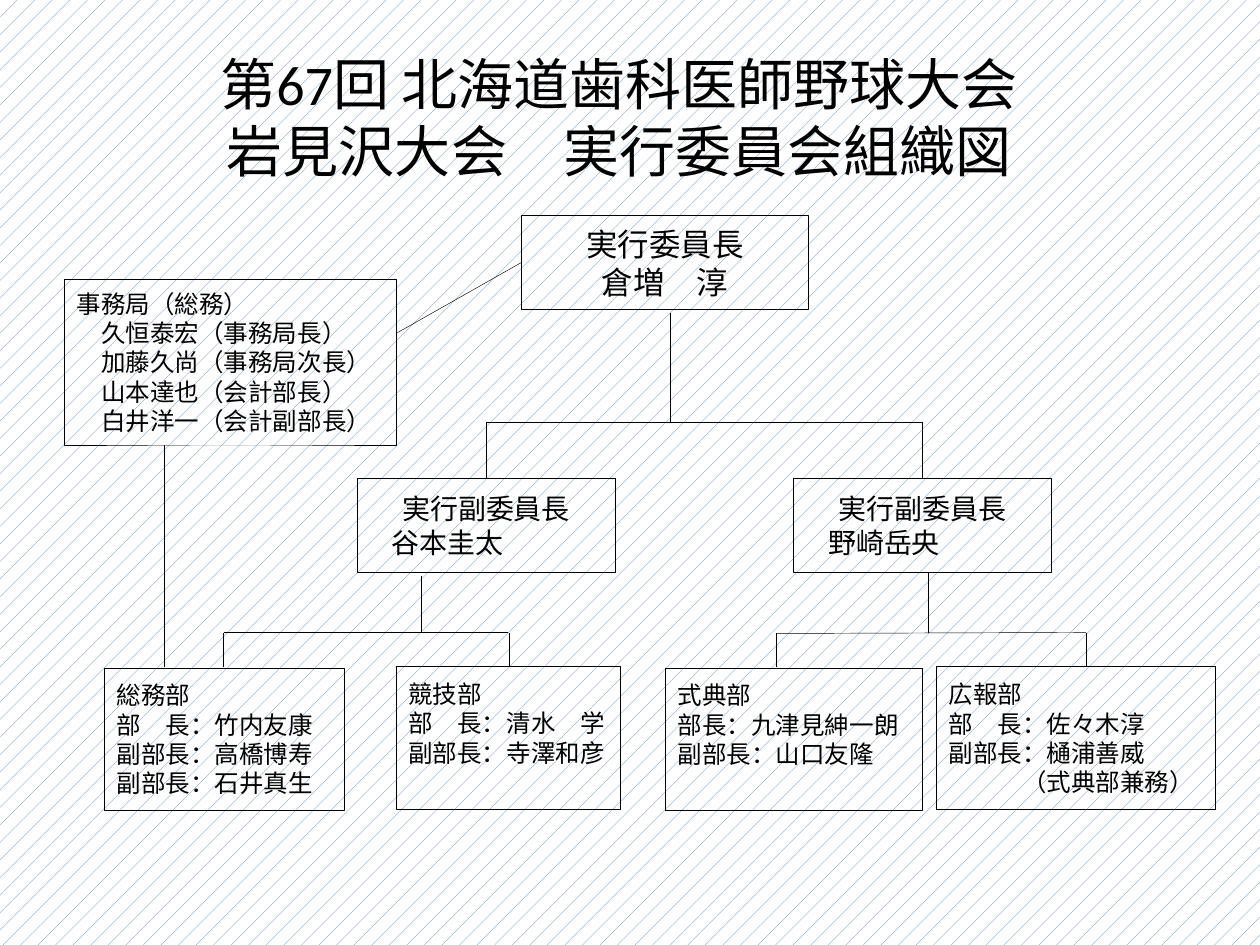
from dataclasses import dataclass

from lxml.etree import SubElement
from pptx import Presentation
from pptx.dml.color import RGBColor
from pptx.enum.dml import MSO_PATTERN
from pptx.enum.shapes import MSO_CONNECTOR as Link, MSO_SHAPE as Preset
from pptx.enum.text import MSO_ANCHOR as Anchor, PP_ALIGN as Align
from pptx.oxml.ns import qn
from pptx.util import Pt


@dataclass(frozen=True)
class Theme:
    ink: RGBColor = RGBColor(0, 0, 0)
    paper: RGBColor = RGBColor(255, 255, 255)
    hatch: RGBColor = RGBColor(0x4F, 0x81, 0xBD)
    latin: str = "Calibri"
    japanese: str = "Noto Sans CJK JP"
    title: int = 32
    chair: int = 18
    vice: int = 16
    body: int = 14
    leading: float = 1.2
    stroke: float = 0.25


THEME = Theme()


def write(paragraph, text, *, size, font=THEME.japanese, align=Align.LEFT, left=0, right=0):
    paragraph.text = text
    paragraph.alignment = align
    paragraph.line_spacing = Pt(round(size * THEME.leading, 2))
    paragraph.space_before = paragraph.space_after = Pt(0)
    margins = paragraph._p.get_or_add_pPr()
    margins.set("marL", str(Pt(left)))
    margins.set("marR", str(Pt(right)))
    margins.set("indent", "0")
    for run in paragraph.runs:
        run.font.size = Pt(size)
        run.font.name = font
        run.font.color.rgb = THEME.ink
        SubElement(run._r.get_or_add_rPr(), qn("a:ea")).set("typeface", THEME.japanese)


class Chart:
    def __init__(self, slide, theme):
        self.slide = slide
        self.theme = theme

    def background(self):
        fill = self.slide.background.fill
        fill.patterned()
        fill.pattern = MSO_PATTERN.PERCENT_5
        fill.fore_color.rgb = self.theme.hatch
        fill.back_color.rgb = self.theme.paper

    def title(self, text, x, y, width, height):
        area = self.slide.shapes.add_textbox(Pt(x), Pt(y), Pt(width), Pt(height))
        frame = area.text_frame
        frame.word_wrap = True
        frame.vertical_anchor = Anchor.MIDDLE
        write(frame.paragraphs[0], text, size=self.theme.title,
              font=self.theme.latin, align=Align.CENTER)

    def box(self, lines, x, y, width, height, *, size, rows=0, align=Align.LEFT, indents=None):
        shape = self.slide.shapes.add_shape(
            Preset.RECTANGLE, Pt(x), Pt(y), Pt(width), Pt(height))
        shape.shadow.inherit = False
        shape.fill.background()
        shape.line.color.rgb = self.theme.ink
        shape.line.width = Pt(self.theme.stroke)
        frame = shape.text_frame
        frame.word_wrap = True
        frame.vertical_anchor = Anchor.MIDDLE
        spare_rows = max(rows - len(lines), 0)
        frame.margin_bottom = Pt(round(3.6 + spare_rows * size * self.theme.leading, 2))
        for index, line in enumerate(lines):
            paragraph = frame.add_paragraph() if index else frame.paragraphs[0]
            write(paragraph, line, size=size, align=align, **(indents or {}).get(index, {}))

    def link(self, x1, y1, x2, y2):
        connector = self.slide.shapes.add_connector(
            Link.STRAIGHT, Pt(x1), Pt(y1), Pt(x2), Pt(y2))
        connector.line.color.rgb = self.theme.ink
        connector.line.width = Pt(self.theme.stroke)
        SubElement(connector._element.spPr, qn("a:effectLst"))


def main():
    deck = Presentation()
    deck.slide_width, deck.slide_height = Pt(720), Pt(540)
    chart = Chart(deck.slides.add_slide(deck.slide_layouts[6]), THEME)
    chart.background()
    chart.title("第67回 北海道歯科医師野球大会\n岩見沢大会　実行委員会組織図", 48, 21, 612, 91)

    chart.box(["実行委員長", "倉増　淳"], 298, 123, 164, 54,
              size=THEME.chair, align=Align.CENTER)

    members = ["久恒泰宏（事務局長）", "加藤久尚（事務局次長）",
               "山本達也（会計部長）", "白井洋一（会計副部長）"]
    chart.box(["事務局（総務）", *members], 36.7, 159.6, 189.6, 94.6, size=THEME.body,
              indents={row: {"left": THEME.body} for row in range(1, len(members) + 1)})

    for vice_chair, x in (("谷本圭太", 204), ("野崎岳央", 453.4)):
        chart.box(["実行副委員長", vice_chair], x, 273, 147.6, 54, size=THEME.vice,
                  align=Align.CENTER, indents={1: {"right": 44}})

    departments = [
        (59.6, 381.6, 137, ["総務部", "部　長：竹内友康", "副部長：高橋博寿", "副部長：石井真生"], None),
        (226.3, 381, 128.2, ["競技部", "部　長：清水　学", "副部長：寺澤和彦"], None),
        (380.2, 381.6, 147, ["式典部", "部長：九津見紳一朗", "副部長：山口友隆"], None),
        (535, 381, 159.4, ["広報部", "部　長：佐々木淳", "副部長：樋浦善威", "（式典部兼務）"],
         {3: {"left": 3 * THEME.body}}),
    ]
    for x, y, width, lines, indents in departments:
        chart.box(lines, x, y, width, 81.4, size=THEME.body, rows=4, indents=indents)

    vice_bar, left_bar, right_bar, department_top = 241.2, 361.4, 362, 381
    chart.link(383, 178.6, 383, vice_bar)
    chart.link(278, vice_bar, 527, vice_bar)
    for x in (278, 527):
        chart.link(x, vice_bar, x, 273)

    chart.link(241, 329, 241, left_bar)
    chart.link(127.8, left_bar, 290.5, left_bar)
    chart.link(530.6, 327, 530.6, right_bar)
    chart.link(443.5, right_bar, 620.6, left_bar)
    for x in (127.6, 291, 443.5, 620.6):
        chart.link(x, right_bar, x, department_top)

    chart.link(298, 150, 226.3, 190.6)
    chart.link(93.6, 254.2, 93.6, department_top)
    deck.save("out.pptx")


if __name__ == "__main__":
    main()
